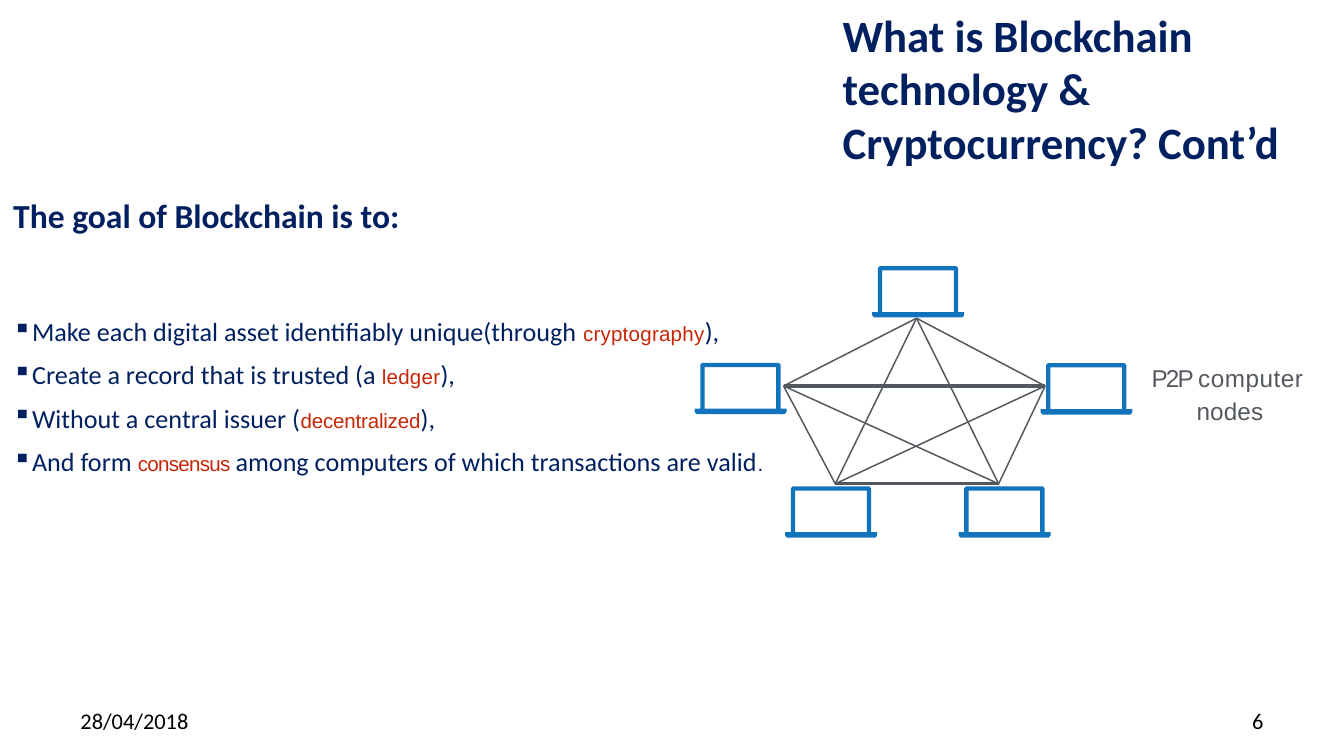
from dataclasses import dataclass, replace
from itertools import combinations

from lxml.etree import SubElement
from pptx import Presentation
from pptx.dml.color import RGBColor
from pptx.enum.shapes import MSO_CONNECTOR as Connector
from pptx.enum.text import MSO_ANCHOR as Anchor, MSO_AUTO_SIZE as AutoSize, PP_ALIGN as Align
from pptx.oxml.ns import qn
from pptx.util import Pt


@dataclass(frozen=True)
class TextStyle:
    font: str
    size: float
    color: str
    bold: bool = False
    spacing: float = 0


@dataclass(frozen=True)
class Theme:
    navy: str = "002060"
    laptop: str = "1173BB"
    link: str = "53585F"
    title: TextStyle = TextStyle("Calibri", 24, "002060", True)
    heading: TextStyle = TextStyle("Calibri", 18, "002060", True)
    body: TextStyle = TextStyle("Calibri", 14, "002060")
    small: TextStyle = TextStyle("Arial", 11, "002060")
    keyword: TextStyle = TextStyle("Arial", 11, "C82506")
    label: TextStyle = TextStyle("Arial", 13, "53585F")
    footer: TextStyle = TextStyle("Calibri", 12, "000000")


class SlideBuilder:
    def __init__(self, slide, theme):
        self.slide = slide
        self.theme = theme

    def add_runs(self, para, runs):
        for text, style in runs:
            span = para.add_run()
            span.text = text
            font = span.font
            font.name, font.size, font.bold = style.font, Pt(style.size), style.bold
            font.color.rgb = RGBColor.from_string(style.color)
            if style.spacing:
                span._r.get_or_add_rPr().set("spc", str(round(style.spacing * 100)))

    def title(self, text, left, top, width, height):
        box = self.slide.shapes.title
        box.left, box.top, box.width, box.height = Pt(left), Pt(top), Pt(width), Pt(height)
        frame = box.text_frame
        frame.word_wrap = True
        frame.auto_size = AutoSize.NONE
        frame.vertical_anchor = Anchor.MIDDLE
        para = frame.paragraphs[0]
        para.alignment = Align.LEFT
        self.add_runs(para, [(text, self.theme.title)])

    def text(self, paragraphs, left, top, width, height, align=Align.LEFT,
             anchor=Anchor.TOP, flush=False, line_spacing=None, bullet=None, hanging=0):
        """Add a text box; flush drops its side insets, hanging indents later lines."""
        box = self.slide.shapes.add_textbox(Pt(left), Pt(top), Pt(width), Pt(height))
        frame = box.text_frame
        frame.word_wrap = True
        frame.vertical_anchor = anchor
        if flush:
            frame.margin_left = frame.margin_right = frame.margin_bottom = 0
            frame.margin_top = Pt(0.9)
        for index, runs in enumerate(paragraphs):
            para = frame.add_paragraph() if index else frame.paragraphs[0]
            if bullet:
                self.add_bullet(para, bullet)
            if hanging:
                properties = para._p.get_or_add_pPr()
                properties.set("marL", str(Pt(hanging)))
                properties.set("indent", str(-Pt(hanging)))
            para.alignment = align
            if line_spacing:
                para.line_spacing = line_spacing
            if index:
                para.space_before = Pt(0.4)
            self.add_runs(para, runs)

    def add_bullet(self, para, character):
        properties = para._p.get_or_add_pPr()
        properties.set("marL", str(Pt(0.9)))
        properties.set("indent", "0")
        color = SubElement(properties, qn("a:buClr"))
        SubElement(color, qn("a:srgbClr")).set("val", self.theme.navy)
        SubElement(properties, qn("a:buChar")).set("char", character)

    def link(self, start, end):
        """Join two points; level links are drawn heavier."""
        line = self.slide.shapes.add_connector(
            Connector.STRAIGHT, *(Pt(value) for value in (*start, *end)))
        line.line.color.rgb = RGBColor.from_string(self.theme.link)
        line.line.width = Pt(1.65 if start[1] == end[1] else 0.8)
        SubElement(line._element.spPr, qn("a:effectLst"))

    def laptop(self, left, top):
        base = [(0, 24.6), (49.2, 24.6), (49.2, 26.4), (48.2, 27.5), (1, 27.5), (0, 26.4)]
        screen = [(3, 24.6), (3, 1), (4, 0), (45, 0), (46, 1), (46, 24.6),
                  (43.7, 24.6), (43.7, 2.3), (5.3, 2.3), (5.3, 24.6)]
        outlines = [[(Pt(left + x), Pt(top + y)) for x, y in part] for part in (base, screen)]
        builder = self.slide.shapes.build_freeform(*outlines[0][0], scale=1.0)
        builder.add_line_segments(outlines[0][1:], close=True)
        builder.move_to(*outlines[1][0])
        builder.add_line_segments(outlines[1][1:], close=True)
        shape = builder.convert_to_shape()
        shape.shadow.inherit = False
        shape.fill.solid()
        shape.fill.fore_color.rgb = RGBColor.from_string(self.theme.laptop)
        shape.line.fill.background()


def main():
    deck = Presentation()
    deck.slide_width, deck.slide_height = Pt(720), Pt(405)
    theme = Theme()
    page = SlideBuilder(deck.slides.add_slide(deck.slide_layouts[5]), theme)
    body, small, keyword, label = theme.body, theme.small, theme.keyword, theme.label

    page.title("What is Blockchain technology & Cryptocurrency? Cont’d", 444.2, 0, 252, 94.3)
    page.text([[("The goal of Blockchain is to:", theme.heading)]], 0, 100.8, 666, 28.8)

    # Link end and laptop corner of each node
    nodes = [
        ((491, 170.5), (467.3, 142.6)),
        ((419.8, 206.8), (372.2, 194.4)),
        ((559.9, 206.8), (557.5, 194.6)),
        ((447.5, 259.2), (420.7, 260.6)),
        ((535, 259.2), (513.6, 260.6)),
    ]
    for (start, _), (end, _) in combinations(nodes, 2):
        page.link(start, end)
    for _, corner in nodes:
        page.laptop(*corner)

    page.text([[("P2P ", replace(label, spacing=-1)),
                ("computer ", replace(label, spacing=0.3)),
                ("nodes", replace(label, spacing=0.1))]],
              617, 191.5, 85, 36, flush=True, line_spacing=1.14, hanging=24)

    goals = [
        [("Make each digital asset identifiably unique(through ", body),
         ("cryptography", replace(keyword, spacing=0.1)), ("),", body)],
        [("Create a record that is trusted (a", body), (" ", replace(small, spacing=-1.6)),
         ("ledger", replace(keyword, spacing=0.1)), ("),", body)],
        [("Without a central issuer (", body),
         ("decentralized", replace(keyword, spacing=-0.1)), ("),", body)],
        [("And form ", body), ("consensus ", replace(keyword, spacing=-0.4)),
         ("among computers of which transactions are valid", body), (".", small)],
    ]
    page.text(goals, 5.8, 162, 527, 93.6, flush=True, line_spacing=1.36, bullet="▪")

    for text, left, align in (("28/04/2018", 36, Align.LEFT), ("6", 516, Align.RIGHT)):
        page.text([[(text, theme.footer)]], left, 375.2, 168, 21.6, align, Anchor.MIDDLE)

    deck.save("out.pptx")


if __name__ == "__main__":
    main()
